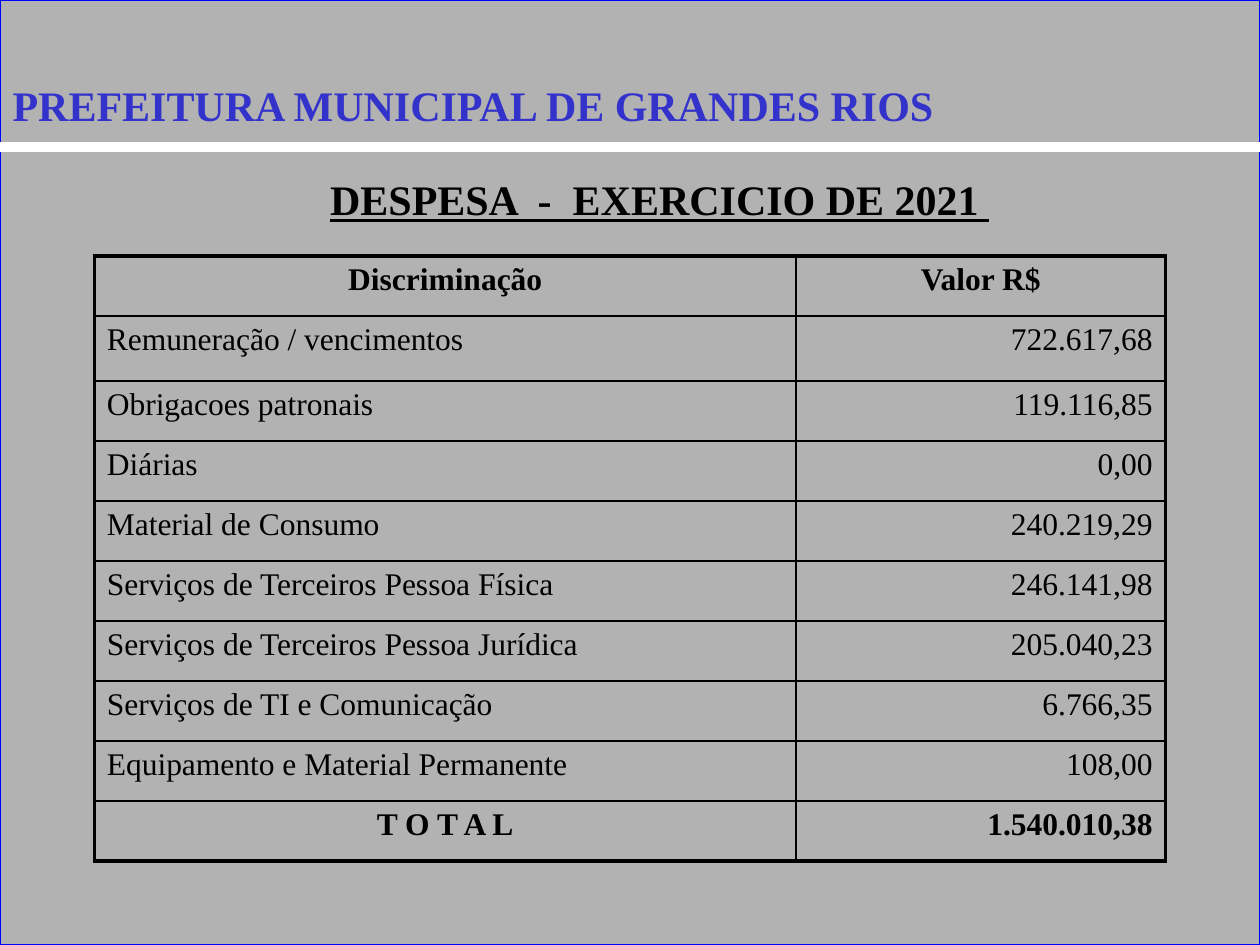
from dataclasses import dataclass

from lxml.etree import SubElement
from pptx import Presentation
from pptx.dml.color import RGBColor
from pptx.enum.shapes import MSO_CONNECTOR, MSO_SHAPE
from pptx.enum.text import MSO_ANCHOR, PP_ALIGN
from pptx.oxml import parse_xml
from pptx.oxml.ns import nsdecls, qn
from pptx.util import Cm, Pt


@dataclass(frozen=True)
class Theme:
    font: str = "Times New Roman"
    background: str = "B2B2B2"
    frame: str = "0000FF"
    rule: str = "FFFFFF"
    title: str = "3333CC"
    shadow: str = "808080"
    text: str = "000000"
    heading_size: int = 24
    table_size: int = 18
    outer_border: float = 2.25
    inner_border: float = 1


theme = Theme()


def format_paragraph(paragraph, size, color, bold, alignment):
    paragraph.alignment = alignment
    paragraph.font.name = theme.font
    paragraph.font.size = Pt(size)
    paragraph.font.bold = bold
    paragraph.font.color.rgb = RGBColor.from_string(color)


def set_border(cell, side, width):
    cell.fill.background()
    properties = cell._tc.get_or_add_tcPr()
    line = parse_xml(
        f'<a:{side} {nsdecls("a")} w="{Pt(width)}"><a:solidFill>'
        f'<a:srgbClr val="{theme.text}"/></a:solidFill></a:{side}>'
    )
    # Borders stand before the fill
    properties.find(qn("a:noFill")).addprevious(line)


presentation = Presentation()
presentation.slide_width = Cm(25.4)
presentation.slide_height = Cm(19.05)
slide = presentation.slides.add_slide(presentation.slide_layouts[5])
shapes = slide.shapes

# Framed background, behind the title
background = shapes.add_shape(
    MSO_SHAPE.RECTANGLE, 0, 0, presentation.slide_width, presentation.slide_height
)
background.shadow.inherit = False
background.fill.solid()
background.fill.fore_color.rgb = RGBColor.from_string(theme.background)
background.line.color.rgb = RGBColor.from_string(theme.frame)
background.line.width = Pt(0.75)
shapes.title.element.addprevious(background.element)

# White rule under the title
rule = shapes.add_connector(
    MSO_CONNECTOR.STRAIGHT, 0, Cm(2.96), presentation.slide_width, Cm(2.96)
)
rule.line.color.rgb = RGBColor.from_string(theme.rule)
rule.line.width = Pt(6)
SubElement(rule.element.spPr, qn("a:effectLst"))

# Title and subtitle
title = shapes.title
title.left, title.top, title.width, title.height = Cm(0), Cm(1.47), Cm(20.9), Cm(1.27)
subtitle = shapes.add_textbox(Cm(3.5), Cm(3.38), Cm(19.6), Cm(2.82))
for shape, text, color, alignment in (
    (title, "PREFEITURA MUNICIPAL DE GRANDES RIOS", theme.title, PP_ALIGN.LEFT),
    (subtitle, "DESPESA  -  EXERCICIO DE 2021 ", theme.text, PP_ALIGN.CENTER),
):
    frame = shape.text_frame
    frame.text = text
    frame.word_wrap = True
    frame.vertical_anchor = MSO_ANCHOR.TOP
    format_paragraph(frame.paragraphs[0], theme.heading_size, color, True, alignment)
subtitle.text_frame.paragraphs[0].font.underline = True

# Title text shadow
title_run = title.text_frame.paragraphs[0].runs[0]
title_run._r.get_or_add_rPr().append(parse_xml(
    f'<a:effectLst {nsdecls("a")}><a:outerShdw dist="35921" dir="2700000">'
    f'<a:srgbClr val="{theme.shadow}"/></a:outerShdw></a:effectLst>'
))

# Expense table
rows = [
    ("Discriminação", "Valor R$"),
    ("Remuneração / vencimentos", "722.617,68"),
    ("Obrigacoes patronais", "119.116,85"),
    ("Diárias", "0,00"),
    ("Material de Consumo", "240.219,29"),
    ("Serviços de Terceiros Pessoa Física", "246.141,98"),
    ("Serviços de Terceiros Pessoa Jurídica", "205.040,23"),
    ("Serviços de TI e Comunicação", "6.766,35"),
    ("Equipamento e Material Permanente", "108,00"),
    ("T O T A L", "1.540.010,38"),
]
last = len(rows) - 1
table = shapes.add_table(len(rows), 2, Cm(1.9), Cm(5.16), Cm(21.59), Cm(12.17)).table
table.first_row = table.horz_banding = False
table.columns[0].width, table.columns[1].width = Cm(14.15), Cm(7.44)

for row_index, values in enumerate(rows):
    table.rows[row_index].height = Cm(1.31 if row_index == 1 else 1.21)
    emphasized = row_index in (0, last)
    for column_index, value in enumerate(values):
        cell = table.cell(row_index, column_index)
        cell.text = value
        if row_index == 0 or (emphasized and column_index == 0):
            alignment = PP_ALIGN.CENTER
        else:
            alignment = PP_ALIGN.RIGHT if column_index else PP_ALIGN.LEFT
        format_paragraph(cell.text_frame.paragraphs[0], theme.table_size,
                         theme.text, emphasized, alignment)
        for side, is_outer in (
            ("lnL", column_index == 0),
            ("lnR", column_index == 1),
            ("lnT", row_index == 0),
            ("lnB", row_index == last),
        ):
            set_border(cell, side, theme.outer_border if is_outer else theme.inner_border)

presentation.save("out.pptx")
